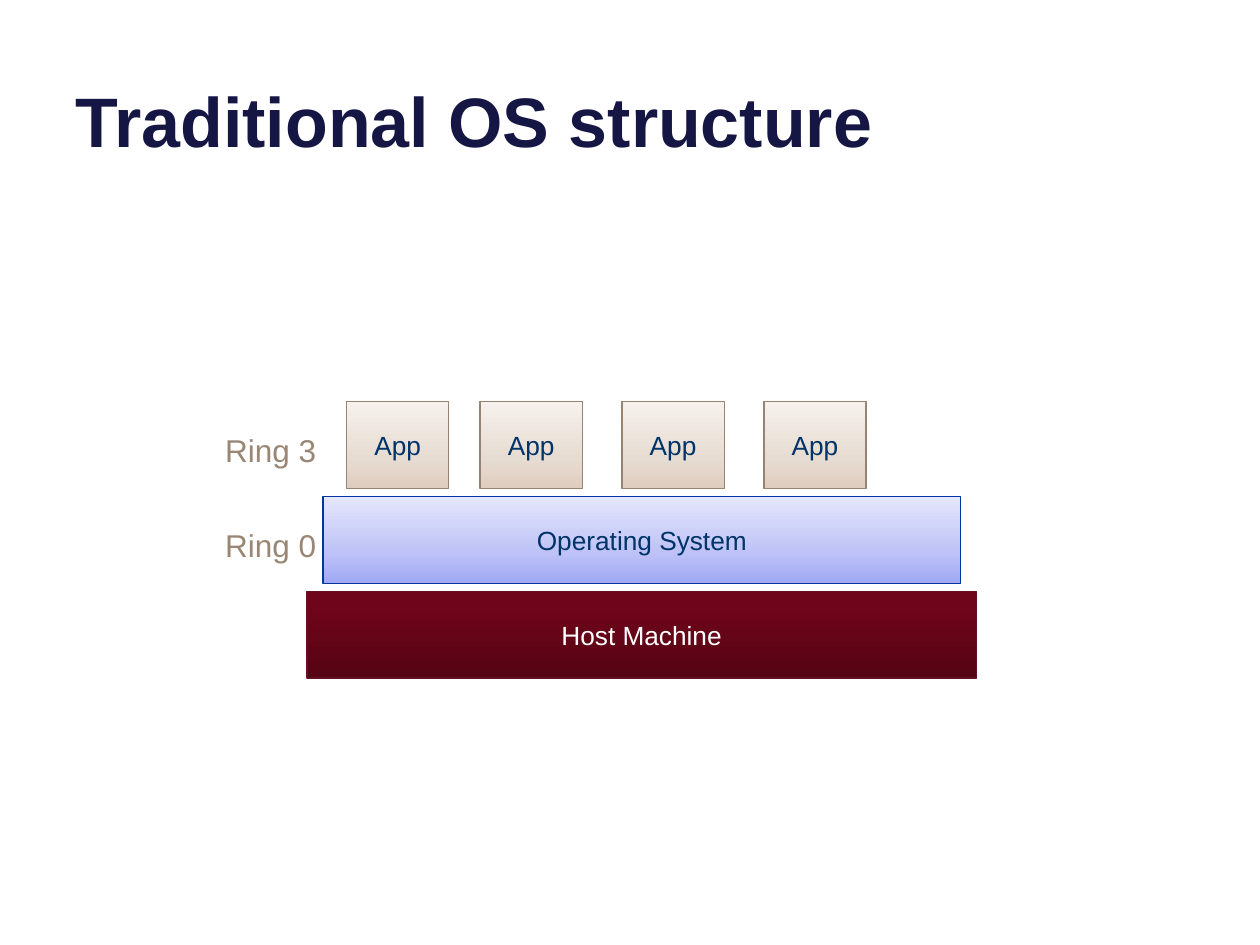
import copy

import pptx
import pptx.dml.color
import pptx.enum.shapes
import pptx.enum.text
import pptx.oxml.ns
import pptx.util

Cm = pptx.util.Cm
Pt = pptx.util.Pt
ANCHOR = pptx.enum.text.MSO_ANCHOR
ALIGN = pptx.enum.text.PP_ALIGN
FIT = pptx.enum.text.MSO_AUTO_SIZE


def rgb(value):
    """Turn a hex string into a colour."""
    return pptx.dml.color.RGBColor.from_string(value)


def apply(target, values):
    """Set each attribute named in a dict of format values."""
    for name, value in values.items():
        setattr(target, name, value)


class RingSlide:
    """Hold the style and the current slide of the ring diagram."""

    font = "Arial"
    layers = {
        "host": ([(0, "550414"), (0.8, "6E051A"), (1, "700318")], "651020", "FFFFFF"),
        "system": ([(0, "A1A8F4"), (0.35, "BEC2F6"), (1, "E5E7FD")], "0035A2", "003367"),
        "app": ([(0, "DFCDBF"), (0.35, "E7DCD2"), (1, "F6F1ED")], "978371", "003367"),
    }

    def __init__(self, deck):
        """Add a title-only slide to the deck."""
        self.slide = deck.slides.add_slide(deck.slide_layouts[5])

    def set_wording(self, shape, wording, size, color, align, frame_format, bold=False):
        """Put one formatted paragraph into a shape."""
        frame = shape.text_frame
        frame.text = wording
        apply(frame, frame_format)
        paragraph = frame.paragraphs[0]
        paragraph.alignment = align
        font = paragraph.runs[0].font
        apply(font, {"name": self.font, "size": Pt(size), "bold": bold})
        font.color.rgb = rgb(color)

    def title(self, wording, left, top, width, height):
        """Place and fill the title placeholder."""
        heading = self.slide.shapes.title
        apply(heading, {"left": Cm(left), "top": Cm(top),
                        "width": Cm(width), "height": Cm(height)})
        self.set_wording(heading, wording, 40, "161645", ALIGN.LEFT,
                         {"vertical_anchor": ANCHOR.BOTTOM, "auto_size": FIT.NONE}, True)

    def block(self, wording, layer, left, top, width, height=1.75):
        """Draw one gradient block of a layer."""
        stops, edge, ink = self.layers[layer]
        block = self.slide.shapes.add_shape(
            pptx.enum.shapes.MSO_SHAPE.RECTANGLE,
            Cm(left), Cm(top), Cm(width), Cm(height))
        block.shadow.inherit = False
        block.fill.gradient()
        block.fill.gradient_angle = 90
        stop_list = next(block._element.iter(pptx.oxml.ns.qn("a:gsLst")))
        stop_list.append(copy.deepcopy(stop_list[0]))
        for stop, (position, color) in zip(block.fill.gradient_stops, stops):
            stop.position = position
            stop.color.rgb = rgb(color)
        block.line.color.rgb = rgb(edge)
        block.line.width = Pt(0.75)
        self.set_wording(block, wording, 15, ink, ALIGN.CENTER,
                         {"vertical_anchor": ANCHOR.MIDDLE, "word_wrap": False})

    def ring(self, wording, left, top):
        """Add the label of a privilege ring."""
        label = self.slide.shapes.add_textbox(Cm(left), Cm(top), Cm(2.36), Cm(1.02))
        self.set_wording(label, wording, 18, "998674", ALIGN.LEFT,
                         {"word_wrap": False, "auto_size": FIT.SHAPE_TO_FIT_TEXT})


def main():
    """Build the slide and save it."""
    deck = pptx.Presentation()
    apply(deck, {"slide_width": Cm(25.4), "slide_height": Cm(19.05)})
    structure = RingSlide(deck)
    structure.title("Traditional OS structure", 1.27, -0.94, 22.86, 4.32)

    app_top, layer_step = 8.1, 1.91
    structure.block("Host Machine", "host", 6.19, app_top + 2 * layer_step, 13.49)
    structure.block("Operating System", "system", 6.51, app_top + layer_step, 12.86)
    for app_left in (6.99, 9.68, 12.54, 15.4):
        structure.block("App", "app", app_left, app_top, 2.06)

    for level, ring_name in enumerate(("Ring 3", "Ring 0")):
        structure.ring(ring_name, 4.29, 8.57 + level * layer_step)
    deck.save("out.pptx")


if __name__ == "__main__":
    main()
